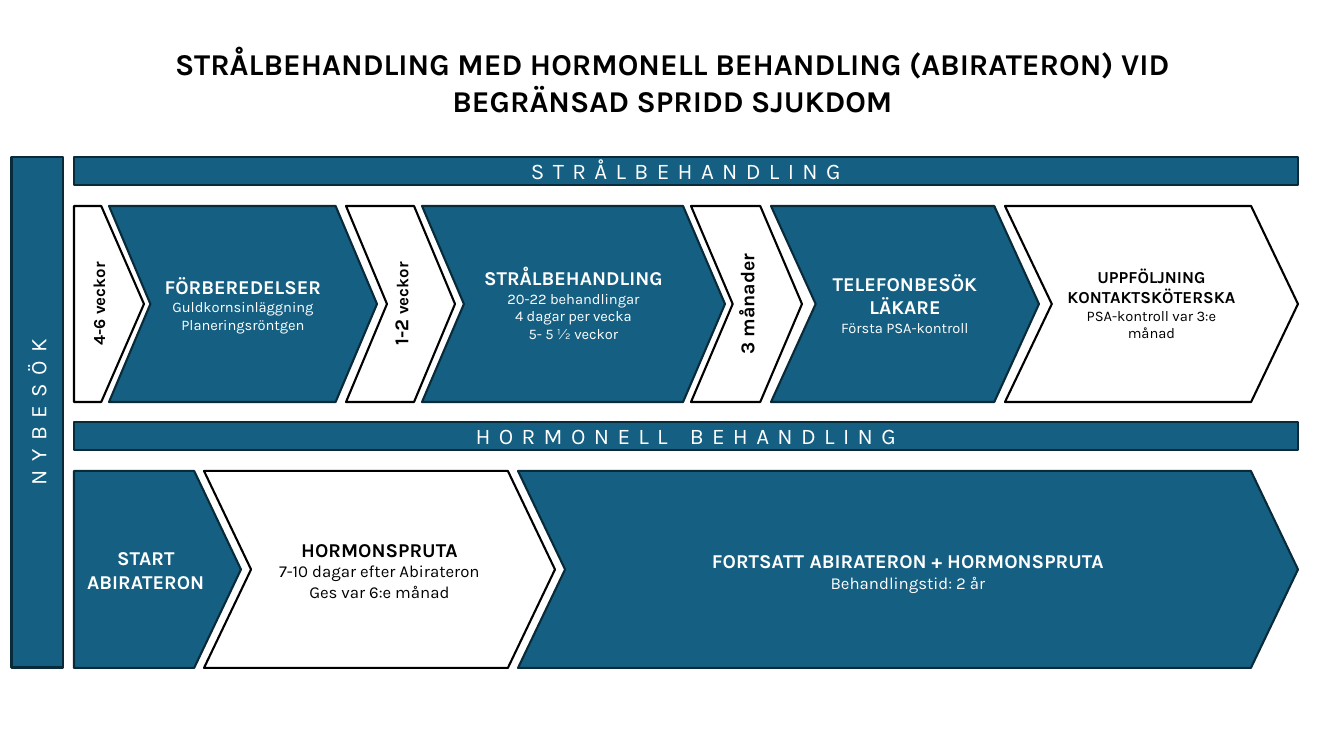
from dataclasses import dataclass

from pptx import Presentation
from pptx.dml.color import RGBColor
from pptx.enum.shapes import MSO_SHAPE
from pptx.enum.text import MSO_ANCHOR, PP_ALIGN
from pptx.oxml.ns import qn
from pptx.util import Emu, Pt

EMU_PER_PX = 914400 / 100.8


@dataclass(frozen=True)
class Theme:
    font: str = "Karla"
    blue: str = "156082"
    navy: str = "092A39"
    black: str = "000000"
    white: str = "FFFFFF"
    title: float = 21.6
    banner: float = 16
    heading: float = 14
    body: float = 12
    detail: float = 10.5
    outline: float = 1.5
    tracking: int = 600


THEME = Theme()
BLUE_STEP = (THEME.blue, THEME.navy, THEME.white)
WHITE_STEP = (THEME.white, THEME.black, THEME.black)
RADIATION_TOP, RADIATION_HEIGHT = 206, 196
HORMONE_TOP, HORMONE_HEIGHT = 471, 197
TRACK_LEFT, TRACK_WIDTH = 74, 1224


def px(length):
    return Emu(round(length * EMU_PER_PX))


def apply(target, values):
    for name, value in values.items():
        setattr(target, name, value)


def bold(words, size=THEME.heading):
    return [(words, size, True)]


def plain(words, size=THEME.detail):
    return [(words, size, False)]


def write(frame, lines, color):
    apply(frame, {"word_wrap": True, "vertical_anchor": MSO_ANCHOR.MIDDLE})
    for index, line in enumerate(lines):
        paragraph = frame.paragraphs[0] if index == 0 else frame.add_paragraph()
        paragraph.alignment = PP_ALIGN.CENTER
        for words, size, is_bold in line:
            run = paragraph.add_run()
            run.text = words
            apply(run.font, {"name": THEME.font, "size": Pt(size), "bold": is_bold})
            run.font.color.rgb = RGBColor.from_string(color)


def add_title(slide, words):
    heading = slide.shapes.add_textbox(*map(px, (93, 42, 1159, 80)))
    write(heading.text_frame, [bold(words, THEME.title)], THEME.black)


def add_block(slide, kind, box, colors, lines):
    fill, outline, ink = colors
    block = slide.shapes.add_shape(kind, *map(px, box))
    block.shadow.inherit = False
    block.fill.solid()
    block.fill.fore_color.rgb = RGBColor.from_string(fill)
    block.line.color.rgb = RGBColor.from_string(outline)
    block.line.width = Pt(THEME.outline)
    write(block.text_frame, lines, ink)
    return block


def add_step(slide, box, colors, point, lines, kind=MSO_SHAPE.CHEVRON):
    step = add_block(slide, kind, box, colors, lines)
    step.adjustments[0] = point
    return step


def add_wait(slide, left, width, point, line, kind=MSO_SHAPE.CHEVRON):
    box = (left, RADIATION_TOP, width, RADIATION_HEIGHT)
    wait = add_step(slide, box, WHITE_STEP, point, [line], kind)
    wait.element.txBody.bodyPr.set("vert", "vert270")


def add_banner(slide, box, words, rotation=0):
    banner = add_block(slide, MSO_SHAPE.RECTANGLE, box, BLUE_STEP,
                       [plain(words, THEME.banner)])
    banner.rotation = rotation
    for properties in banner.element.iter(qn("a:rPr")):
        properties.set("spc", str(THEME.tracking))


def add_radiation_track(slide):
    add_banner(slide, (TRACK_LEFT, 157, TRACK_WIDTH, 28), "STRÅLBEHANDLING")
    add_wait(slide, TRACK_LEFT, 70, 0.61, bold("4-6 veckor", THEME.body),
             MSO_SHAPE.PENTAGON)
    add_wait(slide, 346, 109, 0.376, bold("1-2 ") + bold("veckor", THEME.body))
    add_wait(slide, 691, 111, 0.376, bold("3 månader"))
    steps = [
        (109, 268, 0.211, BLUE_STEP, [
            bold("FÖRBEREDELSER"),
            plain("Guldkornsinläggning"),
            plain("Planeringsröntgen"),
        ]),
        (422, 303, 0.214, BLUE_STEP, [
            bold("STRÅLBEHANDLING"),
            plain("20-22 behandlingar"),
            plain("4 dagar per vecka"),
            plain("5- 5 ½ veckor"),
        ]),
        (771, 268, 0.228, BLUE_STEP, [
            bold("TELEFONBESÖK LÄKARE"),
            plain("Första PSA-kontroll"),
        ]),
        (1005, 293, 0.239, WHITE_STEP, [
            bold("UPPFÖLJNING KONTAKTSKÖTERSKA", THEME.body),
            plain("PSA-kontroll var 3:e månad"),
        ]),
    ]
    for left, width, point, colors, lines in steps:
        box = (left, RADIATION_TOP, width, RADIATION_HEIGHT)
        add_step(slide, box, colors, point, lines)


def add_hormone_track(slide):
    add_banner(slide, (TRACK_LEFT, 422, TRACK_WIDTH, 28), "HORMONELL BEHANDLING")
    steps = [
        (TRACK_LEFT, 167, 0.28, BLUE_STEP, MSO_SHAPE.PENTAGON, [
            bold("START ABIRATERON"),
        ]),
        (204, 351, 0.239, WHITE_STEP, MSO_SHAPE.CHEVRON, [
            bold("HORMONSPRUTA"),
            plain("7-10 dagar efter Abirateron", THEME.body),
            plain("Ges var 6:e månad", THEME.body),
        ]),
        (518, 780, 0.239, BLUE_STEP, MSO_SHAPE.CHEVRON, [
            bold("FORTSATT") + bold(" ", THEME.banner)
            + bold("ABIRATERON + HORMONSPRUTA"),
            plain("Behandlingstid: 2 år", THEME.body),
        ]),
    ]
    for left, width, point, colors, kind, lines in steps:
        box = (left, HORMONE_TOP, width, HORMONE_HEIGHT)
        add_step(slide, box, colors, point, lines, kind)


def main():
    deck = Presentation()
    apply(deck, {"slide_width": px(1344), "slide_height": px(756)})
    slide = deck.slides.add_slide(deck.slide_layouts[6])
    add_title(slide, "STRÅLBEHANDLING MED HORMONELL BEHANDLING (ABIRATERON) "
                     "VID BEGRÄNSAD SPRIDD SJUKDOM")
    add_banner(slide, (-218, 386, 511, 52), "NYBESÖK", 270)
    add_radiation_track(slide)
    add_hormone_track(slide)
    deck.save("out.pptx")


if __name__ == "__main__":
    main()
